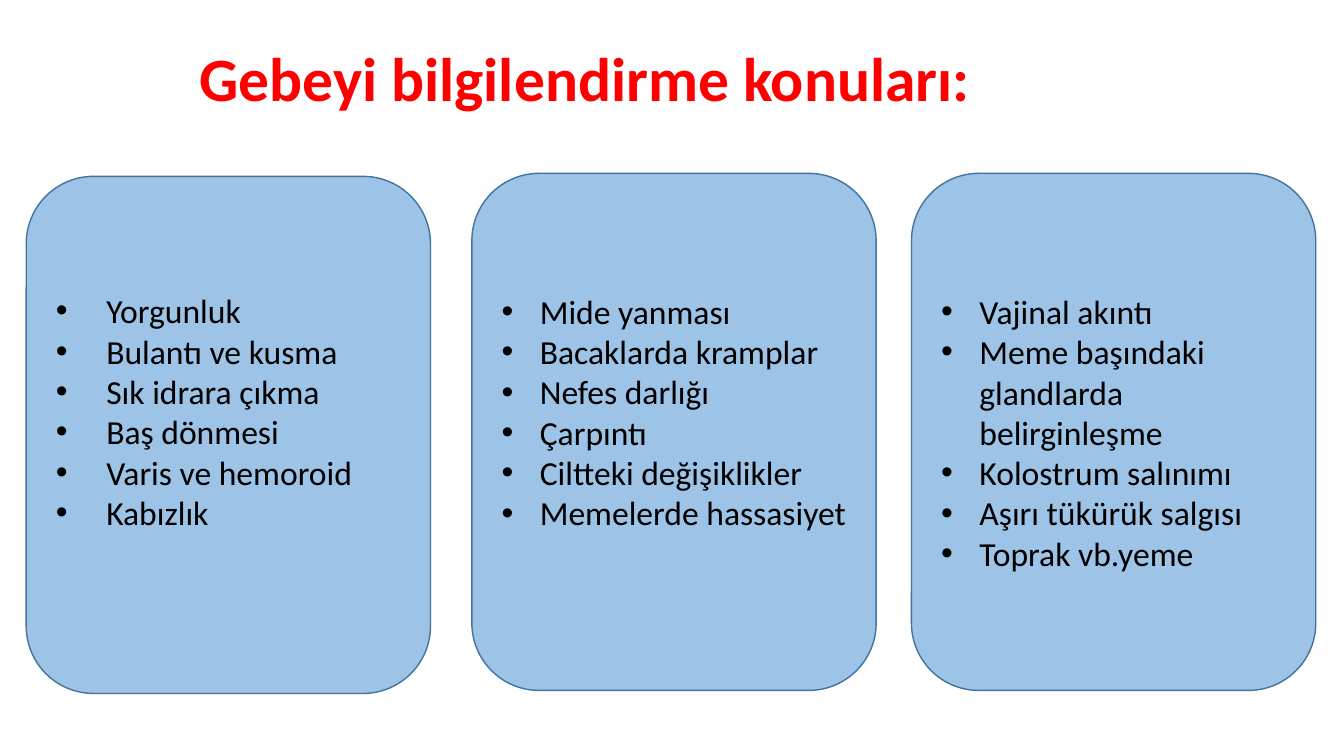
from pptx import Presentation
from pptx.dml.color import RGBColor
from pptx.enum.shapes import MSO_SHAPE
from pptx.enum.text import MSO_ANCHOR, PP_ALIGN
from pptx.oxml.ns import qn
from pptx.util import Inches, Pt
from lxml import etree

RED = RGBColor(0xFF, 0x00, 0x00)
BLACK = RGBColor(0x00, 0x00, 0x00)
CARD_BLUE = RGBColor(0x9D, 0xC3, 0xE6)
EDGE_BLUE = RGBColor(0x43, 0x73, 0x9E)

CARD_WIDTH, CARD_HEIGHT = 4.01, 5.13


def write_lines(frame, lines, size, color, bold=False, spacing=1.0, indent=0):
    """Fill a text frame; an indent above zero makes a bulleted list."""
    frame.word_wrap = True
    frame.vertical_anchor = MSO_ANCHOR.MIDDLE
    for number, line in enumerate(lines):
        paragraph = frame.add_paragraph() if number else frame.paragraphs[0]
        paragraph.alignment = PP_ALIGN.LEFT
        paragraph.line_spacing = spacing
        run = paragraph.add_run()
        run.text = line
        run.font.name = "Calibri"
        run.font.size = Pt(size)
        run.font.bold = bold
        run.font.color.rgb = color
        if indent:
            properties = paragraph._p.get_or_add_pPr()
            properties.set("marL", str(Inches(indent)))
            properties.set("indent", str(-Inches(indent)))
            etree.SubElement(properties, qn("a:buFont"), typeface="Arial")
            etree.SubElement(properties, qn("a:buChar"), char="•")


prs = Presentation()
prs.slide_width, prs.slide_height = Inches(13.33), Inches(7.5)
slide = prs.slides.add_slide(prs.slide_layouts[6])

# Title
title = slide.shapes.add_textbox(Inches(0.92), Inches(0.2), Inches(11.5), Inches(1.22))
title.text_frame.margin_left = Inches(1.06)
write_lines(title.text_frame, ["Gebeyi bilgilendirme konuları:"], 44, RED,
            bold=True, spacing=0.9)

# Topic cards: left, top, bullet indent, bottom margin, topics
cards = [
    (0.26, 1.75, 0.5, 0.52,
     ["Yorgunluk", "Bulantı ve kusma", "Sık idrara çıkma", "Baş dönmesi",
      "Varis ve hemoroid", "Kabızlık"]),
    (4.68, 1.72, 0.38, 0.45,
     ["Mide yanması", "Bacaklarda kramplar", "Nefes darlığı", "Çarpıntı",
      "Ciltteki değişiklikler", "Memelerde hassasiyet"]),
    (9.04, 1.72, 0.38, 0.05,
     ["Vajinal akıntı", "Meme başındaki glandlarda belirginleşme",
      "Kolostrum salınımı", "Aşırı tükürük salgısı", "Toprak vb.yeme"]),
]
for left, top, indent, bottom_margin, topics in cards:
    card = slide.shapes.add_shape(MSO_SHAPE.ROUNDED_RECTANGLE, Inches(left), Inches(top),
                                  Inches(CARD_WIDTH), Inches(CARD_HEIGHT))
    card.shadow.inherit = False
    card.fill.solid()
    card.fill.fore_color.rgb = CARD_BLUE
    card.line.color.rgb = EDGE_BLUE
    card.line.width = Pt(1)
    card.text_frame.margin_bottom = Inches(bottom_margin)
    write_lines(card.text_frame, topics, 24, BLACK, indent=indent)

prs.save("out.pptx")
